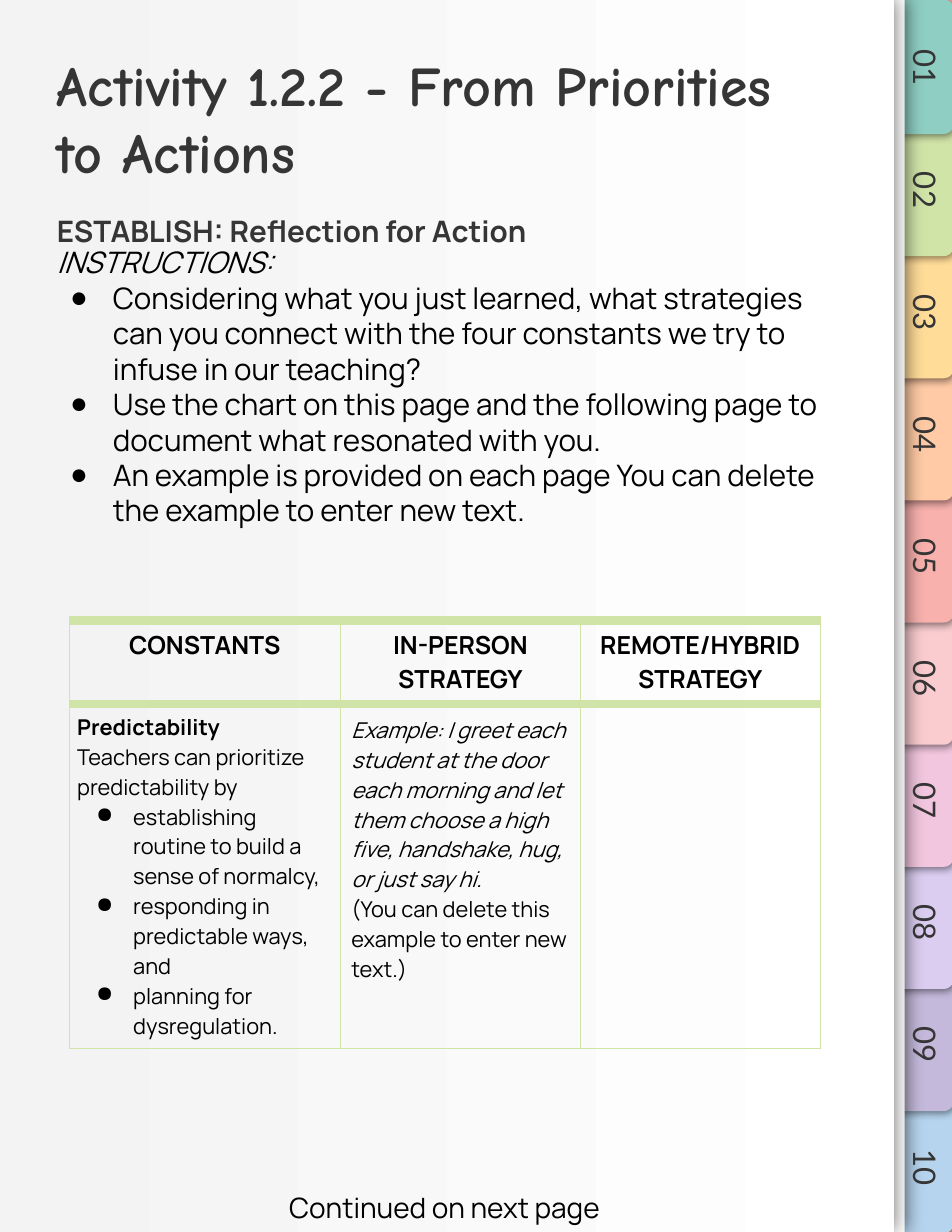
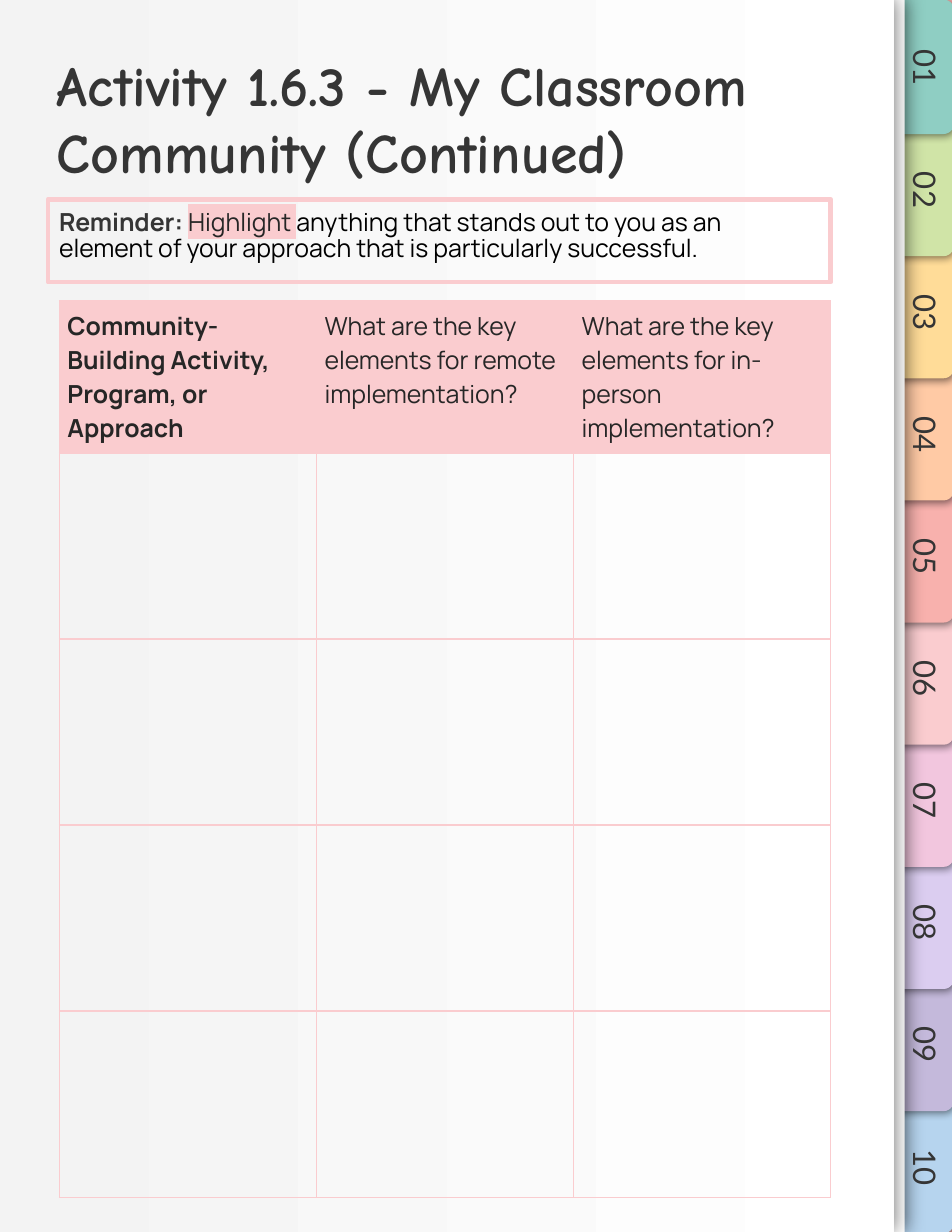
from dataclasses import dataclass, replace

from lxml import etree
from pptx import Presentation
from pptx.dml.color import RGBColor
from pptx.enum.shapes import MSO_SHAPE as SHAPE
from pptx.enum.text import MSO_ANCHOR as ANCHOR, MSO_AUTO_SIZE as AUTO, PP_ALIGN as ALIGN
from pptx.oxml import parse_xml
from pptx.oxml.ns import nsdecls, qn
from pptx.util import Cm, Pt


@dataclass(frozen=True)
class Theme:
    ink: str = "353535"
    dark: str = "262626"
    black: str = "000000"
    white: str = "FFFFFF"
    paper: str = "F3F3F3"
    backdrop: str = "F8B1AD"
    green: str = "D0E4A7"
    pink: str = "FACCCF"
    tabs: tuple = ("8FCEC3", "D0E4A7", "FFDC98", "FFCAA5", "F8B1AD",
                   "FACCCF", "F2C6DE", "DBCDF0", "C4B9DB", "B6D4EE")
    title_font: str = "Comic Neue"
    body_font: str = "Manrope"
    tab_font: str = "Lato"
    title_size: int = 36
    tab_size: int = 20
    body_size: int = 19
    note_size: int = 18
    head_size: int = 16
    cell_size: int = 14


T = Theme()


@dataclass(frozen=True)
class Style:
    size: int
    color: str = T.black
    font: str = T.body_font
    bold: bool = False
    italic: bool = False
    highlight: str = ""


@dataclass(frozen=True)
class Para:
    runs: tuple  # (text, Style) pairs
    align: ALIGN = ALIGN.LEFT
    spacing: float = 1.0
    hang: float = 0  # bullet's hanging indent in cm, 0 for no bullet


BODY = Style(T.body_size)
HEAD = Style(T.head_size, bold=True)
CELL = Style(T.cell_size)
PROMPT = Style(T.head_size, T.dark)
TEXT_INDENT = 1.27


def para(text, style, **options):
    return Para(((text, style),), **options)


def box(left, top, width, height):
    return Cm(left), Cm(top), Cm(width), Cm(height)


def rgb(color):
    return RGBColor.from_string(color)


class Workbook:
    def __init__(self):
        self.prs = Presentation()
        self.prs.slide_width, self.prs.slide_height = Cm(21.59), Cm(27.94)
        self.slide = None

    def add_slide(self, layout, title, width):
        self.slide = self.prs.slides.add_slide(self.prs.slide_layouts[layout])
        style = Style(T.title_size, T.ink, T.title_font, bold=True)
        self.placeholder(0, box(1.04, 0.89, width, 1.6), [para(title, style)])

    def placeholder(self, idx, place, paras):
        sp = self.slide.placeholders[idx]
        sp.left, sp.top, sp.width, sp.height = place
        self.set_text(sp.text_frame, paras)

    def set_text(self, tf, paras, anchor=ANCHOR.TOP, inset=0.25):
        tf.word_wrap = True
        tf.auto_size = AUTO.NONE
        tf.vertical_anchor = anchor
        tf.margin_left = tf.margin_right = tf.margin_top = tf.margin_bottom = Cm(inset)
        self.fill_paragraphs(tf, paras)

    def fill_paragraphs(self, tf, paras):
        for i, spacing_and_runs in enumerate(paras):
            p = tf.add_paragraph() if i else tf.paragraphs[0]
            p.alignment = spacing_and_runs.align
            p.line_spacing, p.space_before = spacing_and_runs.spacing, Pt(0)
            self.bullet(p, spacing_and_runs.hang)
            for text, style in spacing_and_runs.runs:
                r = p.add_run()
                r.text = text
                self.format_run(r, style)

    def bullet(self, p, hang):
        pPr = p._p.get_or_add_pPr()
        pPr.set("marL", str(Cm(TEXT_INDENT if hang else 0)))
        pPr.set("indent", str(-Cm(hang)))
        if hang:
            color = etree.SubElement(pPr, qn("a:buClr"))
            etree.SubElement(color, qn("a:srgbClr"), val=T.black)
            etree.SubElement(pPr, qn("a:buChar"), char="●")
        else:
            etree.SubElement(pPr, qn("a:buNone"))

    def format_run(self, r, style):
        f = r.font
        f.size, f.name, f.bold, f.italic = Pt(style.size), style.font, style.bold, style.italic
        f.color.rgb = rgb(style.color)
        if style.highlight:
            mark = etree.Element(qn("a:highlight"))
            etree.SubElement(mark, qn("a:srgbClr"), val=style.highlight)
            r._r.rPr.find(qn("a:solidFill")).addnext(mark)

    def shape(self, kind, place, fill=None, line=None, line_width=3):
        sp = self.slide.shapes.add_shape(kind, *place)
        sp.shadow.inherit = False
        if fill:
            sp.fill.solid()
            sp.fill.fore_color.rgb = rgb(fill)
        else:
            sp.fill.background()
        if line:
            sp.line.color.rgb, sp.line.width = rgb(line), Pt(line_width)
        else:
            sp.line.fill.background()
        return sp

    def text(self, place, paras, anchor=ANCHOR.TOP):
        sp = self.slide.shapes.add_textbox(*place)
        self.set_text(sp.text_frame, paras, anchor)
        return sp

    def shadow(self, sp, blur, dist, angle):
        effects = sp.element.spPr.find(qn("a:effectLst"))
        effects.append(parse_xml(
            f'<a:outerShdw {nsdecls("a")} blurRad="{Pt(blur)}" dist="{Pt(dist)}" '
            f'dir="{angle * 60000}" algn="bl" rotWithShape="0">'
            f'<a:srgbClr val="{T.black}"><a:alpha val="50000"/></a:srgbClr></a:outerShdw>'))

    def table(self, left, top, widths, heights):
        place = box(left, top, sum(widths), sum(heights))
        table = self.slide.shapes.add_table(len(heights), len(widths), *place).table
        table.first_row = table.horz_banding = False
        for column, width in zip(table.columns, widths):
            column.width = Cm(width)
        for row, height in zip(table.rows, heights):
            row.height = Cm(height)
        return table

    def cell(self, cell, paras, borders, color, fill=None, inset=0.18):
        """Borders are widths in points: left, right, top, bottom."""
        cell.margin_left = cell.margin_right = cell.margin_top = cell.margin_bottom = Cm(inset)
        if fill:
            cell.fill.solid()
            cell.fill.fore_color.rgb = rgb(fill)
        else:
            cell.fill.background()
        for i, (side, width) in enumerate(zip("LRTB", borders)):
            cell._tc.get_or_add_tcPr().insert(i, parse_xml(
                f'<a:ln{side} {nsdecls("a")} w="{Pt(width)}"><a:solidFill>'
                f'<a:srgbClr val="{color}"/></a:solidFill></a:ln{side}>'))
        self.fill_paragraphs(cell.text_frame, paras)

    def tabbed_page(self):
        """Draw the page and its side tabs, then hand them to the slide master."""
        master = self.prs.slide_master
        master.background.fill.solid()
        master.background.fill.fore_color.rgb = rgb(T.backdrop)
        pitch = 2.77
        drawn = []
        for i, color in reversed(list(enumerate(T.tabs))):
            tab = self.shape(SHAPE.ROUND_2_SAME_RECTANGLE,
                             box(19.43, 0.84 + i * pitch, 3.05, 1.35), color)
            tab.adjustments[0], tab.adjustments[1] = 0.17, 0
            tab.rotation = 90
            self.shadow(tab, 5.6, 1.5, 61)
            drawn.append(tab)
        for left in (0.25, 0):
            page = self.shape(SHAPE.RECTANGLE, box(left, 0, 20.27, 27.94), T.white)
            self.shadow(page, 12.4, 0.8, 0)
            drawn.append(page)
        page.fill.gradient()
        page.fill.gradient_angle = 0
        for stop, color in zip(page.fill.gradient_stops, (T.paper, T.white)):
            stop.color.rgb = rgb(color)
        style = Style(T.tab_size, T.ink, T.tab_font)
        for i in range(len(T.tabs)):
            label = self.text(box(19.63, 0.74 + i * pitch, 2.97, 1.6),
                              [para(f"{i + 1:02}", style, align=ALIGN.CENTER)], ANCHOR.BOTTOM)
            label.rotation = 90
            drawn.append(label)
        for n, sp in enumerate(drawn):
            sp.element.nvSpPr.cNvPr.set("id", str(100 + n))
            master.shapes.element.insert(2 + n, sp.element)


def priorities_slide(book):
    book.add_slide(1, "Activity 1.2.2 - From Priorities to Actions", 18.08)
    book.tabbed_page()
    instructions = (
        "Considering what you just learned, what strategies can you connect with "
        "the four constants we try to infuse in our teaching?",
        "Use the chart on this page and the following page to document what resonated with you.",
        "An example is provided on each page You can delete the example to enter new text.")
    book.placeholder(1, box(1.04, 4.34, 18.08, 9.22), [
        para("ESTABLISH: Reflection for Action", replace(BODY, color=T.ink, bold=True),
             spacing=1.3),
        para("INSTRUCTIONS:", replace(BODY, italic=True), spacing=0.88),
        *(para(text, BODY, hang=0.97) for text in instructions)])

    table = book.table(1.57, 14.07, (6.15, 5.44, 5.44), (1.9, 7.8))
    for i, text in enumerate(("CONSTANTS", "IN-PERSON STRATEGY", "REMOTE/HYBRID STRATEGY")):
        book.cell(table.cell(0, i), [para(text, HEAD, align=ALIGN.CENTER)],
                  (0.75, 0.75, 6, 6), T.green)
    habits = ("establishing routine to build a sense of normalcy,",
              "responding in predictable ways, and",
              "planning for dysregulation.")
    predictability = [
        para("Predictability", replace(CELL, bold=True)),
        para("Teachers can prioritize predictability by", CELL),
        *(para(text, CELL, hang=0.84) for text in habits)]
    example = [
        para("Example: I greet each student at the door each morning and let them choose "
             "a high five, handshake, hug, or just say hi.", replace(CELL, italic=True)),
        para("(You can delete this example to enter new text.)", CELL)]
    for i, (paras, inset) in enumerate(((predictability, 0.18), (example, 0.25), ([], 0.25))):
        book.cell(table.cell(1, i), paras, (0.75, 0.75, 6, 0.75), T.green, inset=inset)

    book.text(box(5.56, 26.75, 9.04, 1.27),
              [para("Continued on next page", Style(T.note_size), align=ALIGN.CENTER)])


def community_slide(book):
    book.add_slide(5, "Activity 1.6.3 - My Classroom Community (Continued)", 16.89)
    table = book.table(1.35, 6.82, (5.83,) * 3, (3.45,) + (4.22,) * 4)
    bold = replace(PROMPT, bold=True)
    headings = (
        [para("Community-", bold), para("Building Activity, Program, or Approach", bold)],
        [para("What are the key elements for remote implementation?", PROMPT)],
        [para("What are the key elements for in-person implementation?", PROMPT)])
    for row in range(len(table.rows)):
        for col, heading in enumerate(headings):
            book.cell(table.cell(row, col), [] if row else heading, (1,) * 4, T.pink,
                      fill=None if row else T.pink)

    reminder = book.shape(SHAPE.RECTANGLE, box(1.09, 4.52, 17.75, 1.88), line=T.pink)
    book.set_text(reminder.text_frame, [Para((
        ("Reminder: ", replace(HEAD, color=T.ink)),
        ("Highlight ", replace(PROMPT, highlight=T.pink)),
        ("anything that stands out to you as an element of your approach "
         "that is particularly successful.", Style(T.head_size))), spacing=0.87)])


def main():
    book = Workbook()
    priorities_slide(book)
    community_slide(book)
    book.prs.save("out.pptx")


if __name__ == "__main__":
    main()
